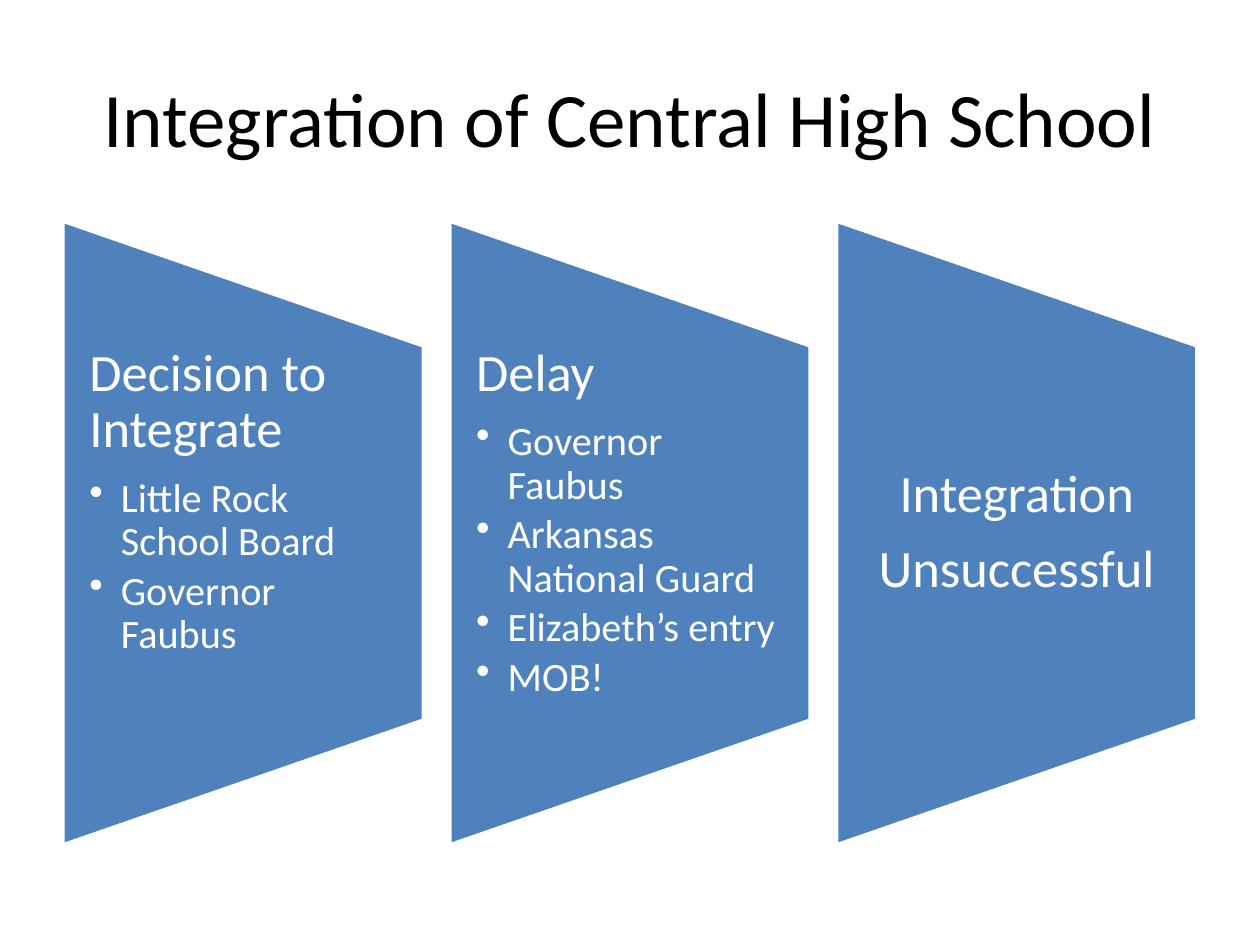
from dataclasses import dataclass

from lxml.etree import SubElement
from pptx import Presentation
from pptx.dml.color import RGBColor
from pptx.enum.shapes import MSO_SHAPE
from pptx.enum.text import MSO_ANCHOR, PP_ALIGN
from pptx.oxml.ns import qn
from pptx.util import Inches, Pt


@dataclass(frozen=True)
class Theme:
    font: str = "Calibri"
    ink: RGBColor = RGBColor(0x00, 0x00, 0x00)
    panel: RGBColor = RGBColor(0x4F, 0x81, 0xBD)
    light: RGBColor = RGBColor(0xFF, 0xFF, 0xFF)
    title_size: float = 44
    heading_size: float = 30
    bullet_size: float = 23


THEME = Theme()
SLIDE_WIDTH, SLIDE_HEIGHT = 10, 7.5
MARGIN = SLIDE_WIDTH * 0.05
CONTENT_WIDTH = SLIDE_WIDTH - 2 * MARGIN
PANEL_WIDTH, PANEL_HEIGHT = 2.86, 4.95
PANEL_MIDDLE = 4.23
TEXT_HEIGHT = PANEL_HEIGHT * 0.6
TEXT_INSET = 0.21
BULLET_INDENT = 0.25

STAGES = [
    (["Decision to Integrate"], ["Little Rock School Board", "Governor Faubus"]),
    (
        ["Delay"],
        ["Governor Faubus", "Arkansas National Guard", "Elizabeth’s entry", "MOB!"],
    ),
    (["Integration", "Unsuccessful"], []),
]


def add_text_box(slide, left, top, width, height, anchor):
    box = slide.shapes.add_textbox(
        Inches(left), Inches(top), Inches(width), Inches(height)
    )
    box.text_frame.word_wrap = True
    box.text_frame.vertical_anchor = anchor
    return box.text_frame


def style_paragraph(paragraph, size, color, alignment):
    paragraph.alignment = alignment
    for run in paragraph.runs:
        run.font.name = THEME.font
        run.font.size = Pt(size)
        run.font.color.rgb = color


def add_bullet(paragraph):
    properties = paragraph._p.get_or_add_pPr()
    properties.set("marL", str(Inches(BULLET_INDENT)))
    properties.set("indent", str(-Inches(BULLET_INDENT)))
    SubElement(properties, qn("a:buChar"), char="•")


def add_title(slide, text):
    frame = add_text_box(slide, MARGIN, 0.3, CONTENT_WIDTH, 1.25, MSO_ANCHOR.MIDDLE)
    frame.text = text
    style_paragraph(frame.paragraphs[0], THEME.title_size, THEME.ink, PP_ALIGN.CENTER)


def add_panel(slide, left):
    center = left + PANEL_WIDTH / 2
    shape = slide.shapes.add_shape(
        MSO_SHAPE.FLOWCHART_MANUAL_OPERATION,
        Inches(center - PANEL_HEIGHT / 2),
        Inches(PANEL_MIDDLE - PANEL_WIDTH / 2),
        Inches(PANEL_HEIGHT),
        Inches(PANEL_WIDTH),
    )
    shape.rotation = 270
    shape.shadow.inherit = False
    shape.fill.solid()
    shape.fill.fore_color.rgb = THEME.panel
    shape.line.color.rgb = THEME.light
    shape.line.width = Pt(2)


def add_stage_text(slide, left, headings, bullets):
    anchor = MSO_ANCHOR.TOP if bullets else MSO_ANCHOR.MIDDLE
    alignment = PP_ALIGN.LEFT if bullets else PP_ALIGN.CENTER
    top = PANEL_MIDDLE - TEXT_HEIGHT / 2
    frame = add_text_box(slide, left, top, PANEL_WIDTH, TEXT_HEIGHT, anchor)
    frame.margin_left = frame.margin_right = Inches(TEXT_INSET)
    frame.margin_top = frame.margin_bottom = 0
    frame.text = "\n".join(headings + bullets)
    for index, paragraph in enumerate(frame.paragraphs):
        is_bullet = index >= len(headings)
        size = THEME.bullet_size if is_bullet else THEME.heading_size
        paragraph.line_spacing = 0.9
        paragraph.space_after = Pt(size * (0.15 if is_bullet else 0.35))
        style_paragraph(paragraph, size, THEME.light, alignment)
        if is_bullet:
            paragraph.level = 1
            add_bullet(paragraph)


def main():
    presentation = Presentation()
    presentation.slide_width = Inches(SLIDE_WIDTH)
    presentation.slide_height = Inches(SLIDE_HEIGHT)
    slide = presentation.slides.add_slide(presentation.slide_layouts[6])

    add_title(slide, "Integration of Central High School")
    pitch = (CONTENT_WIDTH - PANEL_WIDTH) / (len(STAGES) - 1)
    for column, (headings, bullets) in enumerate(STAGES):
        left = MARGIN + column * pitch
        add_panel(slide, left)
        add_stage_text(slide, left, headings, bullets)

    presentation.save("out.pptx")


if __name__ == "__main__":
    main()
